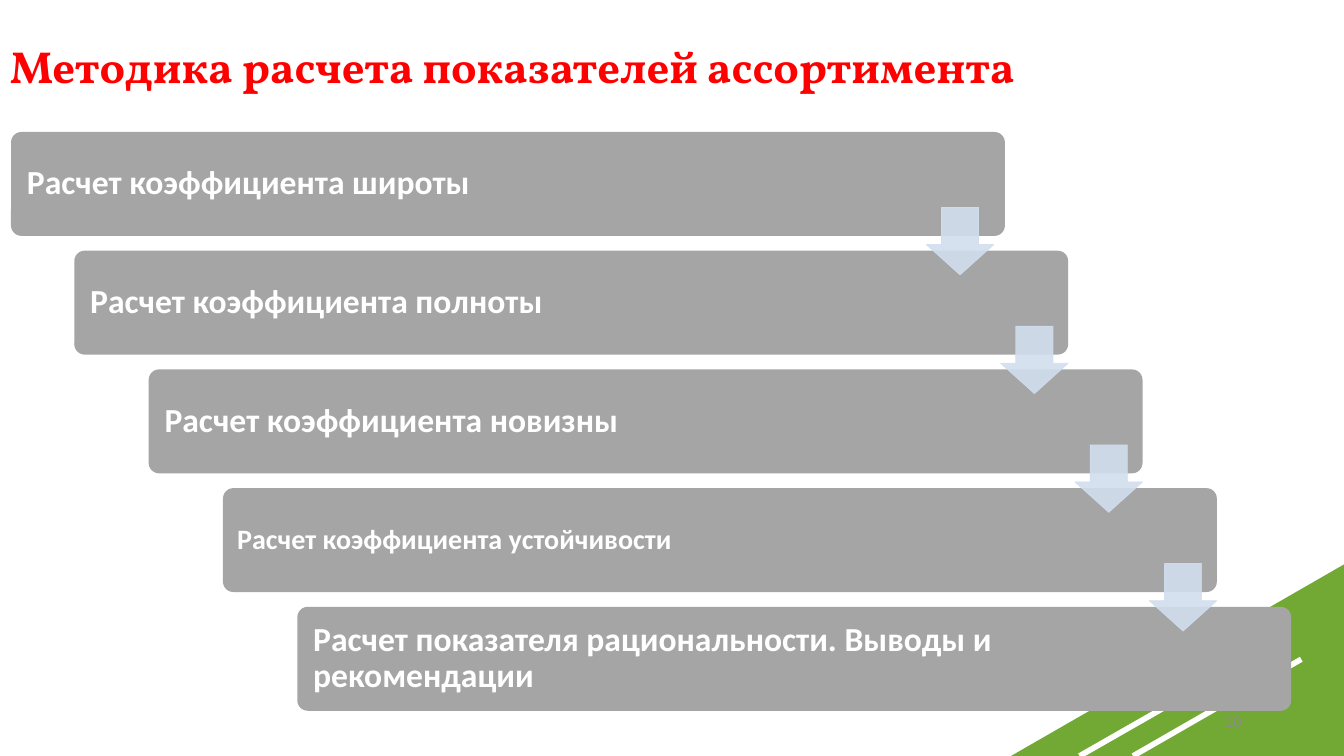
import pptx
import pptx.util
import pptx.dml.color
import pptx.enum.shapes
import pptx.enum.text
import pptx.oxml.ns
from lxml import etree

Pt = pptx.util.Pt
RGBColor = pptx.dml.color.RGBColor
MSO_SHAPE = pptx.enum.shapes.MSO_SHAPE
PP_ALIGN = pptx.enum.text.PP_ALIGN
qn = pptx.oxml.ns.qn

TITLE = "Методика расчета показателей ассортимента"
STEPS = [
    ("Расчет коэффициента широты", 24),
    ("Расчет коэффициента полноты", 24),
    ("Расчет коэффициента новизны", 24),
    ("Расчет коэффициента устойчивости", 20),
    ("Расчет показателя рациональности. Выводы и рекомендации", 24),
]
PAGE_NUMBER = "10"
STRIPES = [(771.1, 540, 846.7, 496.8), (809.3, 540, 929.5, 470.9)]

RED = RGBColor(0xFF, 0x00, 0x00)
WHITE = RGBColor(0xFF, 0xFF, 0xFF)
GREEN = RGBColor(0x71, 0xA9, 0x34)
GRAY = RGBColor(0xA5, 0xA5, 0xA5)
NUMBER_GRAY = RGBColor(0x8B, 0x8B, 0x8B)
PALE_BLUE = RGBColor(0xD2, 0xDE, 0xEF)

STEP_X, STEP_Y = 53.1, 84.8
BAR_LEFT, BAR_TOP, BAR_WIDTH, BAR_HEIGHT = 7.9, 94.3, 709.9, 74.2
ARROW_LEFT, ARROW_TOP, ARROW_SIZE = 661.7, 148.2, 48.2


def add_filled_shape(slide, kind, box, color):
    shape = slide.shapes.add_shape(kind, *map(Pt, box))
    shape.shadow.inherit = False
    shape.fill.solid()
    shape.fill.fore_color.rgb = color
    shape.line.fill.background()
    return shape


def write_text(shape, text, font_name, size, color, bold, align):
    frame = shape.text_frame
    frame.text = text
    frame.word_wrap = True
    frame.vertical_anchor = pptx.enum.text.MSO_ANCHOR.MIDDLE
    paragraph = frame.paragraphs[0]
    paragraph.alignment = align
    paragraph.line_spacing = 0.9
    font = paragraph.runs[0].font
    font.name = font_name
    font.size = Pt(size)
    font.bold = bold
    font.color.rgb = color
    return frame


def make_translucent(shape, percent):
    for color in shape.element.spPr.iter(qn("a:srgbClr")):
        etree.SubElement(color, qn("a:alpha"), val=str(percent * 1000))


def add_corner(slide):
    triangle = add_filled_shape(slide, MSO_SHAPE.RIGHT_TRIANGLE, (722.2, 403.2, 237.8, 136.8), GREEN)
    triangle.element.spPr.xfrm.set("flipH", "1")
    for ends in STRIPES:
        stripe = slide.shapes.add_connector(pptx.enum.shapes.MSO_CONNECTOR.STRAIGHT, *map(Pt, ends))
        stripe.line.color.rgb = WHITE
        stripe.line.width = Pt(4)
        etree.SubElement(stripe.element.spPr, qn("a:effectLst"))


def add_bar(slide, index, text, size):
    left = max(BAR_LEFT, index * STEP_X)
    box = (left, BAR_TOP + index * STEP_Y, BAR_WIDTH, BAR_HEIGHT)
    bar = add_filled_shape(slide, MSO_SHAPE.ROUNDED_RECTANGLE, box, GRAY)
    bar.adjustments[0] = 0.1
    frame = write_text(bar, text, "Calibri", size, WHITE, True, PP_ALIGN.LEFT)
    frame.margin_left = Pt(9.2 if size == 24 else 8)
    frame.margin_right = Pt(111)


def add_arrow(slide, index):
    box = (ARROW_LEFT + index * STEP_X, ARROW_TOP + index * STEP_Y, ARROW_SIZE, ARROW_SIZE)
    arrow = add_filled_shape(slide, MSO_SHAPE.DOWN_ARROW, box, PALE_BLUE)
    arrow.adjustments[0] = 0.55
    arrow.adjustments[1] = 0.45
    arrow.line.color.rgb = PALE_BLUE
    arrow.line.width = Pt(0.5)
    make_translucent(arrow, 90)


def main():
    presentation = pptx.Presentation()
    presentation.slide_width = Pt(960)
    presentation.slide_height = Pt(540)
    slide = presentation.slides.add_slide(presentation.slide_layouts[6])

    add_corner(slide)
    title = slide.shapes.add_textbox(Pt(0), Pt(21.6), Pt(907.2), Pt(55.4))
    write_text(title, TITLE, "Vollkorn", 32, RED, True, PP_ALIGN.LEFT)
    number = slide.shapes.add_textbox(Pt(834), Pt(502), Pt(60), Pt(28))
    write_text(number, PAGE_NUMBER, "Calibri", 12, NUMBER_GRAY, False, PP_ALIGN.RIGHT)

    for index, (text, size) in enumerate(STEPS):
        add_bar(slide, index, text, size)
    for index in range(len(STEPS) - 1):
        add_arrow(slide, index)

    presentation.save("out.pptx")


if __name__ == "__main__":
    main()
